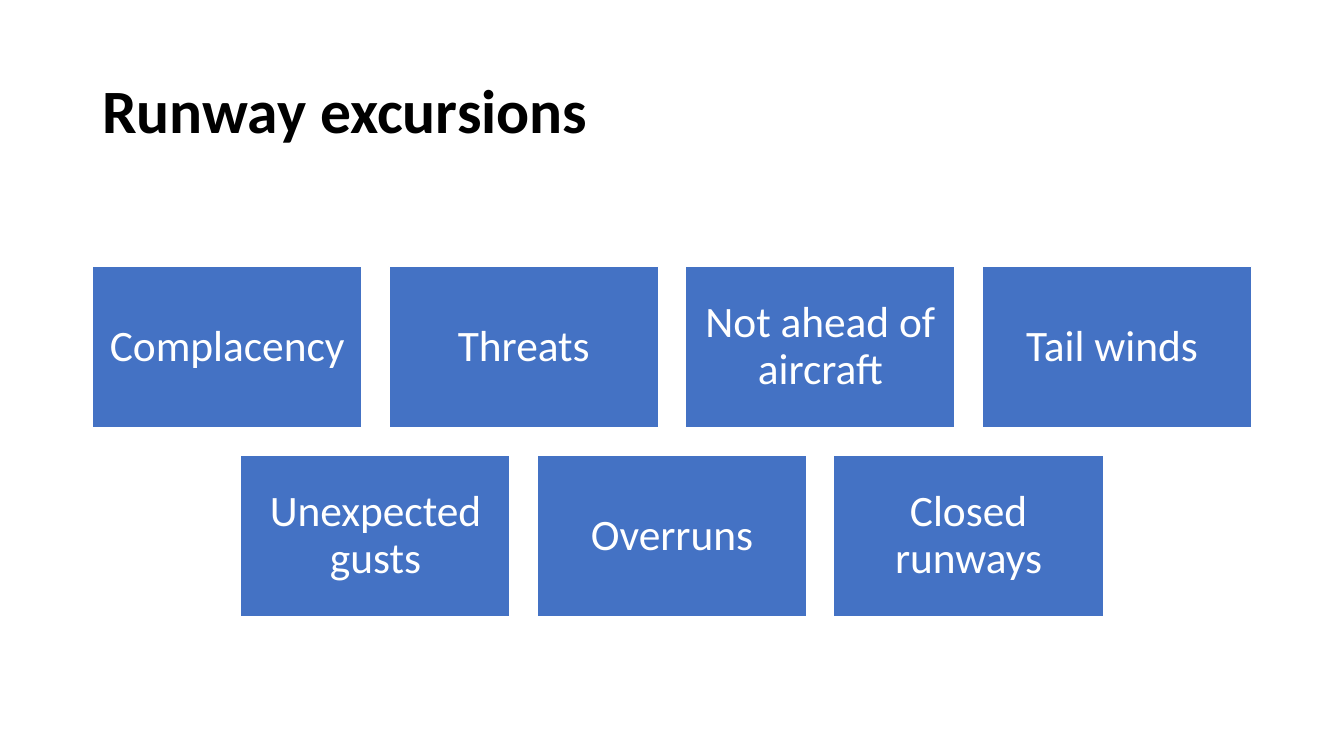
"""Build the runway excursions slide: a title above two centred rows of tiles."""
from dataclasses import dataclass

from pptx import Presentation
from pptx import util as u
from pptx.dml import color
from pptx.enum import shapes, text

COLORS = {"title": "000000", "tile": "4472C4", "white": "FFFFFF"}
PAGE_WIDTH, PAGE_HEIGHT = 960, 540
TILE_WIDTH, TILE_HEIGHT, GAP = 192.56, 115.54, 19.26
FIRST_ROW_TOP = 190.3
ROWS = (
    ("Complacency ", "Threats", "Not ahead of aircraft", "Tail winds "),
    ("Unexpected gusts", "Overruns", "Closed runways"),
)


@dataclass(frozen=True)
class Label:
    wording: str
    size: float
    ink: str
    bold: bool
    align: text.PP_ALIGN
    inset_x: float
    inset_y: float


@dataclass(frozen=True)
class Tile:
    wording: str
    left: float
    top: float


def rgb(name: str) -> color.RGBColor:
    return color.RGBColor.from_string(COLORS[name])


def apply_format(target: object, values: dict) -> None:
    for name, value in values.items():
        setattr(target, name, value)


def write_label(box, label: Label) -> None:
    frame = box.text_frame
    apply_format(frame, {
        "word_wrap": True,
        "vertical_anchor": text.MSO_ANCHOR.MIDDLE,
        "margin_left": u.Pt(label.inset_x),
        "margin_right": u.Pt(label.inset_x),
        "margin_top": u.Pt(label.inset_y),
        "margin_bottom": u.Pt(label.inset_y),
    })
    para = frame.paragraphs[0]
    apply_format(para, {"alignment": label.align, "line_spacing": 0.9})
    span = para.add_run()
    span.text = label.wording
    apply_format(span.font, {
        "name": "Calibri", "size": u.Pt(label.size), "bold": label.bold,
    })
    span.font.color.rgb = rgb(label.ink)


def draw_title(page, wording: str) -> None:
    box = page.shapes.add_textbox(u.Pt(66), u.Pt(28.75), u.Pt(828), u.Pt(104.4))
    write_label(box, Label(wording, 44, "title", True, text.PP_ALIGN.LEFT, 7.2, 3.6))


def draw_tile(page, tile: Tile) -> None:
    box = page.shapes.add_shape(
        shapes.MSO_SHAPE.RECTANGLE, u.Pt(tile.left), u.Pt(tile.top),
        u.Pt(TILE_WIDTH), u.Pt(TILE_HEIGHT))
    box.shadow.inherit = False
    box.fill.solid()
    box.fill.fore_color.rgb = rgb("tile")
    box.line.color.rgb = rgb("white")
    box.line.width = u.Pt(1)
    write_label(box, Label(tile.wording, 31, "white", False, text.PP_ALIGN.CENTER, 9.3, 9.3))


def layout_tiles() -> list[Tile]:
    tiles = []
    for row, wordings in enumerate(ROWS):
        row_width = len(wordings) * (TILE_WIDTH + GAP) - GAP
        row_left = (PAGE_WIDTH - row_width) / 2
        top = FIRST_ROW_TOP + row * (TILE_HEIGHT + GAP)
        for column, wording in enumerate(wordings):
            tiles.append(Tile(wording, row_left + column * (TILE_WIDTH + GAP), top))
    return tiles


def main() -> None:
    deck = Presentation()
    apply_format(deck, {"slide_width": u.Pt(PAGE_WIDTH), "slide_height": u.Pt(PAGE_HEIGHT)})
    page = deck.slides.add_slide(deck.slide_layouts[6])
    draw_title(page, "Runway excursions")
    for tile in layout_tiles():
        draw_tile(page, tile)
    deck.save("out.pptx")


if __name__ == "__main__":
    main()
